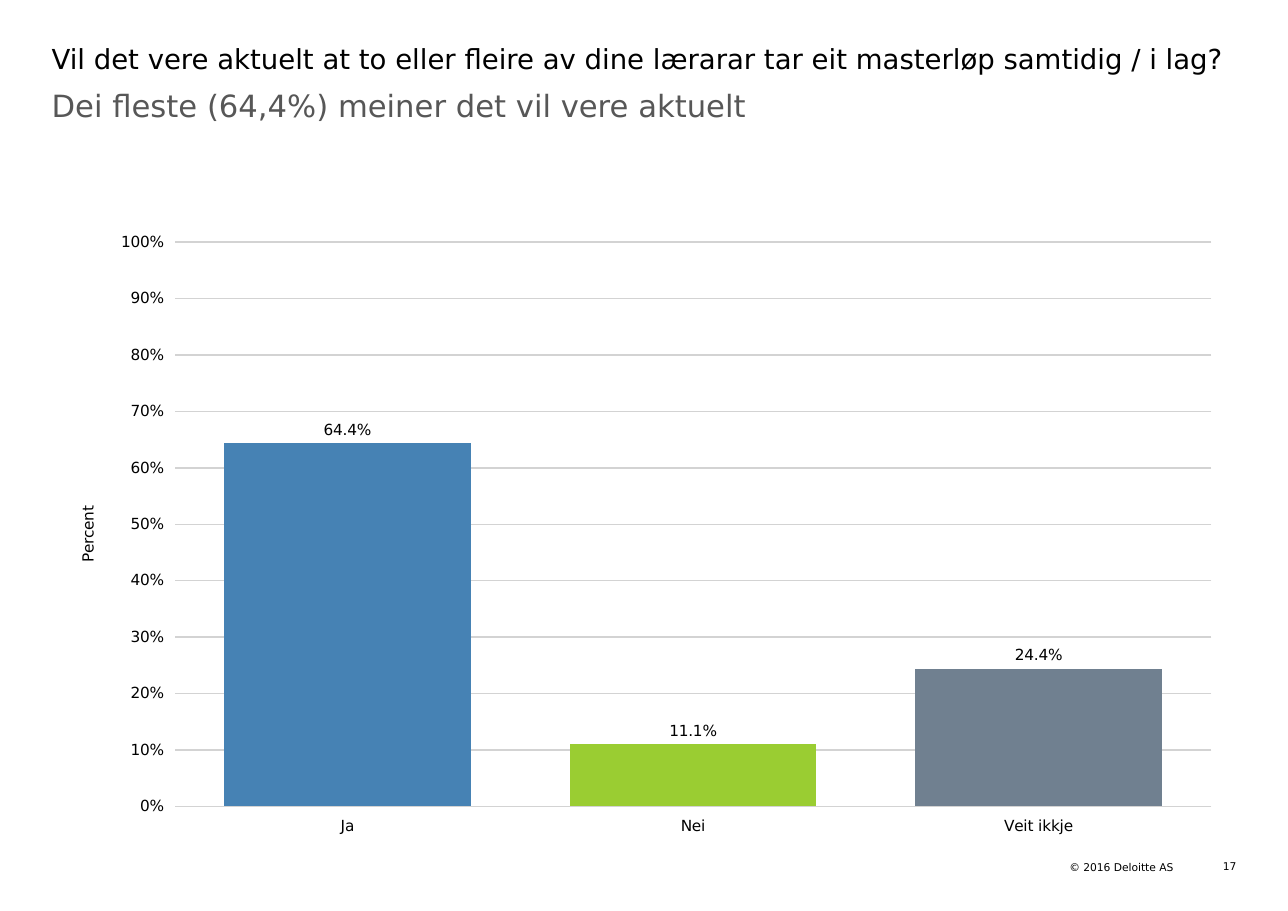
from lxml import etree
from pptx import Presentation
from pptx.chart.data import CategoryChartData
from pptx.dml.color import RGBColor
from pptx.enum.chart import XL_CHART_TYPE, XL_LABEL_POSITION, XL_TICK_MARK
from pptx.enum.text import MSO_ANCHOR, MSO_AUTO_SIZE, PP_ALIGN
from pptx.oxml.ns import qn
from pptx.util import Cm, Pt

COLUMNS = XL_CHART_TYPE.COLUMN_CLUSTERED
OUTSIDE_END = XL_LABEL_POSITION.OUTSIDE_END
CROSS = XL_TICK_MARK.CROSS
TOP = MSO_ANCHOR.TOP
MIDDLE = MSO_ANCHOR.MIDDLE
NO_AUTOFIT = MSO_AUTO_SIZE.NONE
LEFT = PP_ALIGN.LEFT
RIGHT = PP_ALIGN.RIGHT
FONT = "DejaVu Sans"


def write_text(box, place, text, size, color, align=LEFT, anchor=TOP, wrap=True):
    box.left, box.top, box.width, box.height = [Cm(length) for length in place]
    frame = box.text_frame
    frame.margin_left = frame.margin_top = frame.margin_right = frame.margin_bottom = 0
    frame.auto_size = NO_AUTOFIT
    frame.word_wrap = wrap
    frame.vertical_anchor = anchor
    para = frame.paragraphs[0]
    para.alignment = align
    para.space_before = Pt(0)
    span = para.add_run()
    span.text = text
    span.font.name = FONT
    span.font.size = Pt(size)
    span.font.color.rgb = RGBColor.from_string(color)
    return para


def set_layout(parent, index, settings):
    for old_layout in parent.findall(qn("c:layout")):
        parent.remove(old_layout)
    layout = etree.Element(qn("c:layout"))
    manual = etree.SubElement(layout, qn("c:manualLayout"))
    for name, value in settings.items():
        etree.SubElement(manual, qn(f"c:{name}")).set("val", str(value))
    parent.insert(index, layout)


deck = Presentation()
deck.slide_width = Cm(29.69)
deck.slide_height = Cm(21.01)
page = deck.slides.add_slide(deck.slide_layouts[1])

write_text(
    page.shapes.title, (1.19, 0.97, 27.53, 1.02),
    "Vil det vere aktuelt at to eller fleire av dine lærarar tar eit masterløp samtidig / i lag?",
    18, "000000",
)
subtitle = write_text(
    page.placeholders[1], (1.19, 2.01, 27.28, 2.31),
    "Dei fleste (64,4%) meiner det vil vere aktuelt", 20, "575757",
)
subtitle.space_after = Pt(10.8)
properties = subtitle._p.get_or_add_pPr()
properties.set("marL", "0")
properties.set("indent", "0")
etree.SubElement(properties, qn("a:buNone"))

footers = [
    ("© 2016 Deloitte AS", (24.59, 19.84, 2.46, 0.3), MIDDLE, False),
    ("17", (27.74, 19.84, 0.76, 0.3), TOP, True),
]
for text, place, anchor, wrap in footers:
    box = page.shapes.add_textbox(0, 0, 0, 0)
    write_text(box, place, text, 7, "000000", RIGHT, anchor, wrap)

answers = [("Ja", 0.644, "4682B4"), ("Nei", 0.111, "9ACD32"), ("Veit ikkje", 0.244, "708090")]
data = CategoryChartData()
data.categories = [answer for answer, share, color in answers]
data.add_series("Series 1", [share for answer, share, color in answers])
chart = page.shapes.add_chart(
    COLUMNS, Cm(1.19), Cm(5.11), Cm(27.28), Cm(14.43), data
).chart
chart.has_title = False
chart.has_legend = False
chart.font.name = FONT
chart.font.size = Pt(10)
chart.font.color.rgb = RGBColor.from_string("000000")

for axis in (chart.category_axis, chart.value_axis):
    axis.major_tick_mark = CROSS
    axis.format.line.fill.background()
    axis.tick_labels.font.size = Pt(10)

value_axis = chart.value_axis
value_axis.minimum_scale = 0
value_axis.maximum_scale = 1
value_axis.major_unit = 0.1
value_axis.tick_labels.number_format = "0%"
value_axis.tick_labels.number_format_is_linked = False
value_axis.has_major_gridlines = True
grid_line = value_axis.major_gridlines.format.line
grid_line.color.rgb = RGBColor.from_string("D3D3D3")
grid_line.width = Pt(1)

axis_title = value_axis.axis_title
span = axis_title.text_frame.paragraphs[0].add_run()
span.text = "Percent"
span.font.name = FONT
span.font.size = Pt(10)
span.font.bold = False
axis_title.text_frame._txBody.bodyPr.set("rot", "-5400000")

plot = chart.plots[0]
plot.gap_width = 40
plot.vary_by_categories = False
plot.has_data_labels = True
labels = plot.data_labels
labels.show_value = True
labels.number_format = "0.0%"
labels.number_format_is_linked = False
labels.position = OUTSIDE_END
labels.font.size = Pt(10)

series = plot.series[0]
for index, (answer, share, color) in enumerate(answers):
    fill = series.points[index].format.fill
    fill.solid()
    fill.fore_color.rgb = RGBColor.from_string(color)

set_layout(axis_title._element, 1, {"xMode": "edge", "yMode": "edge", "x": 0.02, "y": 0.45})
set_layout(
    chart._chartSpace.chart.plotArea, 0,
    {"layoutTarget": "inner", "xMode": "edge", "yMode": "edge",
     "x": 0.104, "y": 0.033, "w": 0.876, "h": 0.902},
)

deck.save("out.pptx")
